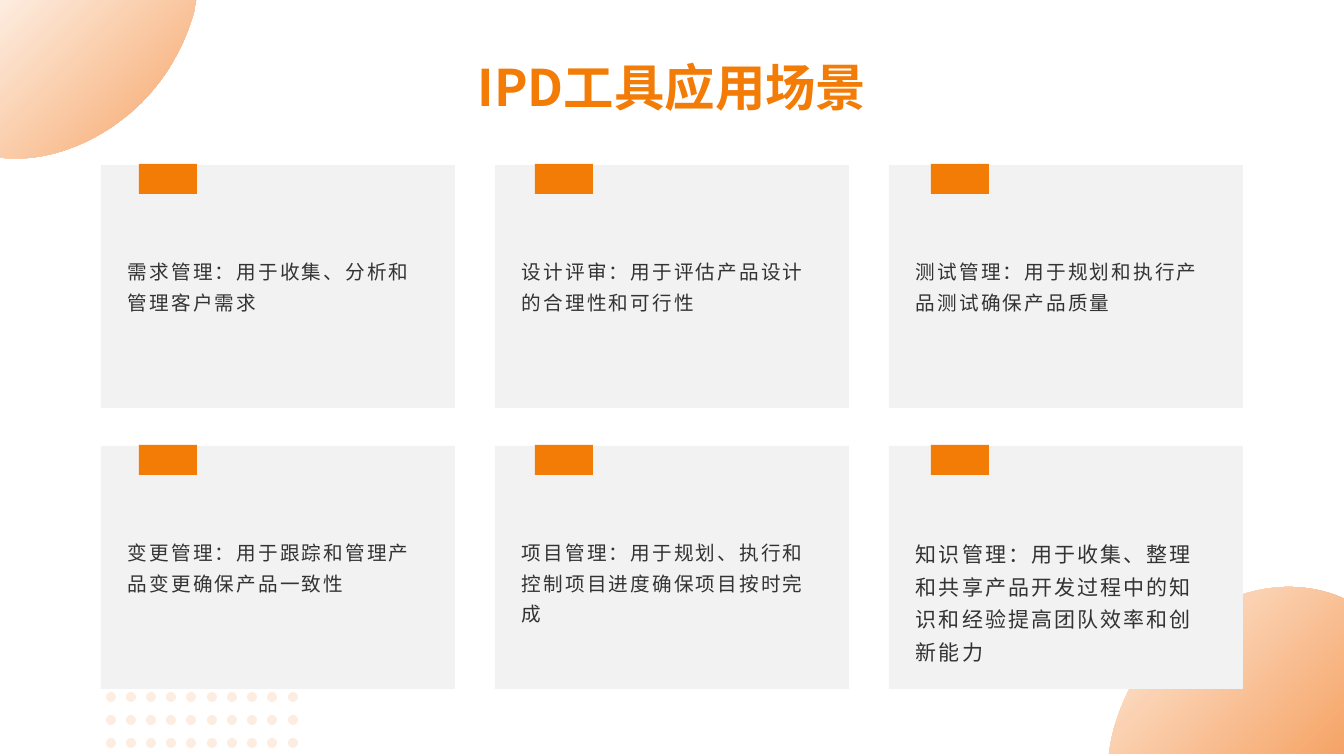
from lxml.etree import SubElement
from pptx import Presentation
from pptx.dml.color import RGBColor
from pptx.enum.shapes import MSO_SHAPE as Shape
from pptx.enum.text import MSO_ANCHOR as Anchor, MSO_AUTO_SIZE as AutoSize, PP_ALIGN as Align
from pptx.oxml.ns import qn
from pptx.util import Emu, Pt

EMU_PER_PX = 914400 / 100.8
ORANGE, LIGHT_ORANGE, PALE = "F37C07", "F6A466", "FDEDE0"
CARD_GRAY, INK = "F2F2F2", "333333"

CARDS = [
    ("需求管理：用于收集、分析和管理客户需求", 14),
    ("设计评审：用于评估产品设计的合理性和可行性", 14),
    ("测试管理：用于规划和执行产品测试确保产品质量", 14),
    ("变更管理：用于跟踪和管理产品变更确保产品一致性", 14),
    ("项目管理：用于规划、执行和控制项目进度确保项目按时完成", 14),
    ("知识管理：用于收集、整理和共享产品开发过程中的知识和经验提高团队效率和创新能力", 15),
]

TOP_LEFT_CURVE = [
    (0, 0), (196, 0), (194, 12),
    (185, 44, 167, 78, 139, 105), (99, 143, 48, 162, 4, 158), (0, 157),
]
BOTTOM_RIGHT_CURVE = [
    (1288, 587), (1306, 587, 1323, 590, 1340, 597), (1344, 599), (1344, 754),
    (1109, 754), (1110, 747),
    (1116, 711, 1134, 671, 1166, 640), (1202, 606, 1248, 587, 1288, 587),
]


def px(value):
    return Emu(round(value * EMU_PER_PX))


def color(value):
    return RGBColor.from_string(value)


def gradient(fill, start, end, angle):
    fill.gradient()
    fill.gradient_angle = angle
    for stop, value in zip(fill.gradient_stops, (start, end)):
        stop.color.rgb = color(value)


def outline(segments, steps=24):
    points = []
    for segment in segments:
        if len(segment) == 2:
            points.append(segment)
            continue
        controls = [points[-1], segment[:2], segment[2:4], segment[4:]]
        for step in range(1, steps + 1):
            t = step / steps
            weights = ((1 - t) ** 3, 3 * t * (1 - t) ** 2, 3 * t * t * (1 - t), t ** 3)
            points.append(tuple(
                sum(weight * control[axis] for weight, control in zip(weights, controls))
                for axis in (0, 1)
            ))
    return [(px(x), px(y)) for x, y in points]


class SlideBuilder:
    font_name = "Noto Sans CJK SC"

    def __init__(self, slide):
        self.slide = slide

    def shape(self, kind, left, top, width, height, fill):
        shape = self.slide.shapes.add_shape(kind, px(left), px(top), px(width), px(height))
        shape.shadow.inherit = False
        shape.fill.solid()
        shape.fill.fore_color.rgb = color(fill)
        shape.line.fill.background()

    def curved_corner(self, segments):
        points = outline(segments)
        builder = self.slide.shapes.build_freeform(*points[0])
        builder.add_line_segments(points[1:])
        shape = builder.convert_to_shape()
        shape.shadow.inherit = False
        gradient(shape.fill, PALE, LIGHT_ORANGE, 315)
        shape.line.fill.background()

    def text(self, text, left, top, width, height, *, size, fill=None, bold=False,
             align=Align.LEFT, anchor=Anchor.TOP, line_spacing=1.0, tracking=0,
             auto_size=AutoSize.NONE):
        box = self.slide.shapes.add_textbox(px(left), px(top), px(width), px(height))
        frame = box.text_frame
        frame.word_wrap = True
        frame.auto_size = auto_size
        frame.vertical_anchor = anchor
        paragraph = frame.paragraphs[0]
        paragraph.alignment = align
        paragraph.line_spacing = line_spacing
        run = paragraph.add_run()
        run.text = text
        font = run.font
        font.size = Pt(size)
        font.bold = bold
        font.name = self.font_name
        if fill:
            font.color.rgb = color(fill)
        else:
            gradient(font.fill, ORANGE, LIGHT_ORANGE, 180)
        properties = run._r.get_or_add_rPr()
        properties.set("spc", str(round(tracking * 100)))
        SubElement(properties, qn("a:ea")).set("typeface", self.font_name)

    def dots(self):
        for row in range(3):
            for column in range(10):
                self.shape(Shape.OVAL, 106 + 182 * column // 9, 692 + 23 * row, 10, 10, PALE)

    def card(self, index, text, size):
        row, column = divmod(index, 3)
        down = 281 * row
        self.shape(Shape.RECTANGLE, 101 + 394 * column, 165 + down, 354, 243, CARD_GRAY)
        self.shape(Shape.RECTANGLE, 139 + 396 * column, 164 + down, 58, 30, ORANGE)
        self.text(text, 118 + 394 * column, 248 + down, 318, 142, size=size, fill=INK,
                  line_spacing=1.3, tracking=1.5)


def main():
    presentation = Presentation()
    presentation.slide_width = px(1344)
    presentation.slide_height = px(756)
    builder = SlideBuilder(presentation.slides.add_slide(presentation.slide_layouts[6]))
    builder.curved_corner(TOP_LEFT_CURVE)
    builder.curved_corner(BOTTOM_RIGHT_CURVE)
    builder.dots()
    builder.text("IPD工具应用场景", 67, 50, 1210, 72, size=36, bold=True,
                 align=Align.CENTER, anchor=Anchor.MIDDLE,
                 auto_size=AutoSize.SHAPE_TO_FIT_TEXT)
    for index, (text, size) in enumerate(CARDS):
        builder.card(index, text, size)
    presentation.save("out.pptx")


if __name__ == "__main__":
    main()
